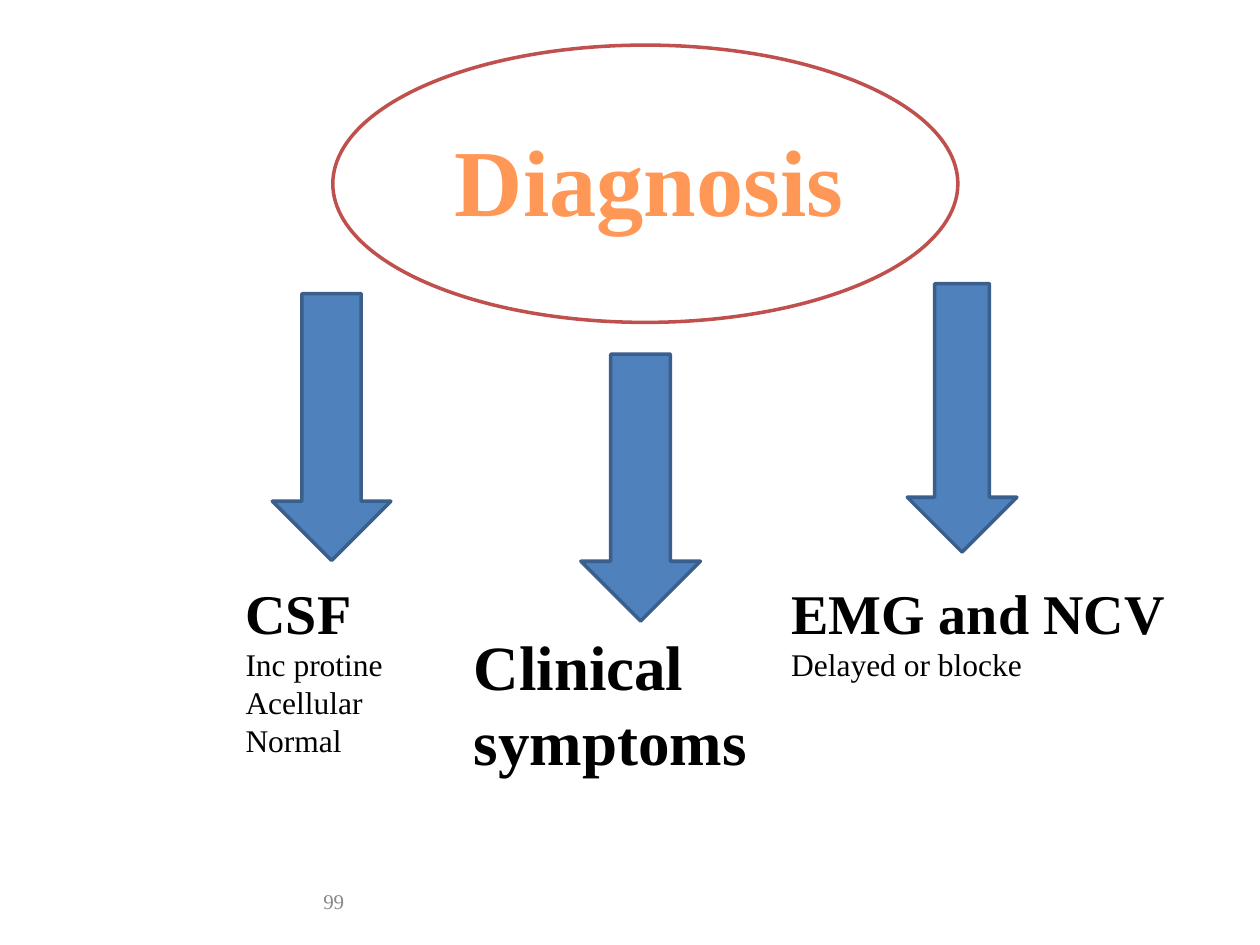
from pptx import Presentation
from pptx.dml.color import RGBColor
from pptx.enum.shapes import MSO_SHAPE as Shape
from pptx.enum.text import MSO_ANCHOR as Anchor, PP_ALIGN as Align
from pptx.util import Cm, Pt

COLORS = {
    "white": "FFFFFF",
    "black": "000000",
    "red": "C0504D",
    "blue": "4F81BD",
    "dark blue": "3A5F8C",
    "orange": "FF9856",
    "gray": "898989",
}


class SlideBuilder:
    font = "Times New Roman"
    line_width = Pt(2)

    def __init__(self, slide):
        self.slide = slide

    def color(self, name):
        return RGBColor.from_string(COLORS[name])

    def shape(self, kind, place, fill, line):
        """Draw a preset shape; place is left, top, width, height in cm."""
        shape = self.slide.shapes.add_shape(kind, *map(Cm, place))
        shape.shadow.inherit = False
        shape.fill.solid()
        shape.fill.fore_color.rgb = self.color(fill)
        shape.line.color.rgb = self.color(line)
        shape.line.width = self.line_width

    def text(self, place, lines, color="black", align=Align.LEFT,
             anchor=Anchor.TOP, wrap=True):
        """Add a text box; each line is a tuple of wording, size and bold."""
        box = self.slide.shapes.add_textbox(*map(Cm, place))
        frame = box.text_frame
        frame.word_wrap = wrap
        frame.vertical_anchor = anchor
        for index, (wording, size, bold) in enumerate(lines):
            para = frame.add_paragraph() if index else frame.paragraphs[0]
            para.alignment = align
            span = para.add_run()
            span.text = wording
            span.font.name = self.font
            span.font.size = Pt(size)
            span.font.bold = bold
            span.font.color.rgb = self.color(color)


def main():
    deck = Presentation()
    deck.slide_width, deck.slide_height = Cm(25.4), Cm(19.05)
    page = SlideBuilder(deck.slides.add_slide(deck.slide_layouts[6]))

    page.shape(Shape.OVAL, (6.71, 0.91, 12.6, 5.59), "white", "red")
    page.text((8.71, 2.34, 8.76, 2.57), [("Diagnosis", 54, True)],
              color="orange", align=Align.CENTER, wrap=False)

    arrows = [
        (18.29, 5.72, 2.21, 5.41),
        (11.71, 7.14, 2.41, 5.38),
        (5.49, 5.92, 2.39, 5.38),
    ]
    for place in arrows:
        page.shape(Shape.DOWN_ARROW, place, "blue", "dark blue")

    findings = [
        ((4.7, 11.53, 3.99, 3.94), "CSF", 32,
         ["Inc protine", "Acellular", "Normal"]),
        ((9.3, 12.52, 8.2, 3.33), "Clinical symptoms", 36, []),
        ((15.7, 11.53, 8.92, 2.39), "EMG and NCV", 32,
         ["Delayed or blocke"]),
    ]
    for place, heading, size, details in findings:
        lines = [(heading, size, True)]
        lines += [(detail, 18, False) for detail in details]
        page.text(place, lines)

    page.text((1.27, 17.65, 5.92, 1.02), [("99", 12, False)],
              color="gray", align=Align.RIGHT, anchor=Anchor.MIDDLE)

    deck.save("out.pptx")


if __name__ == "__main__":
    main()
